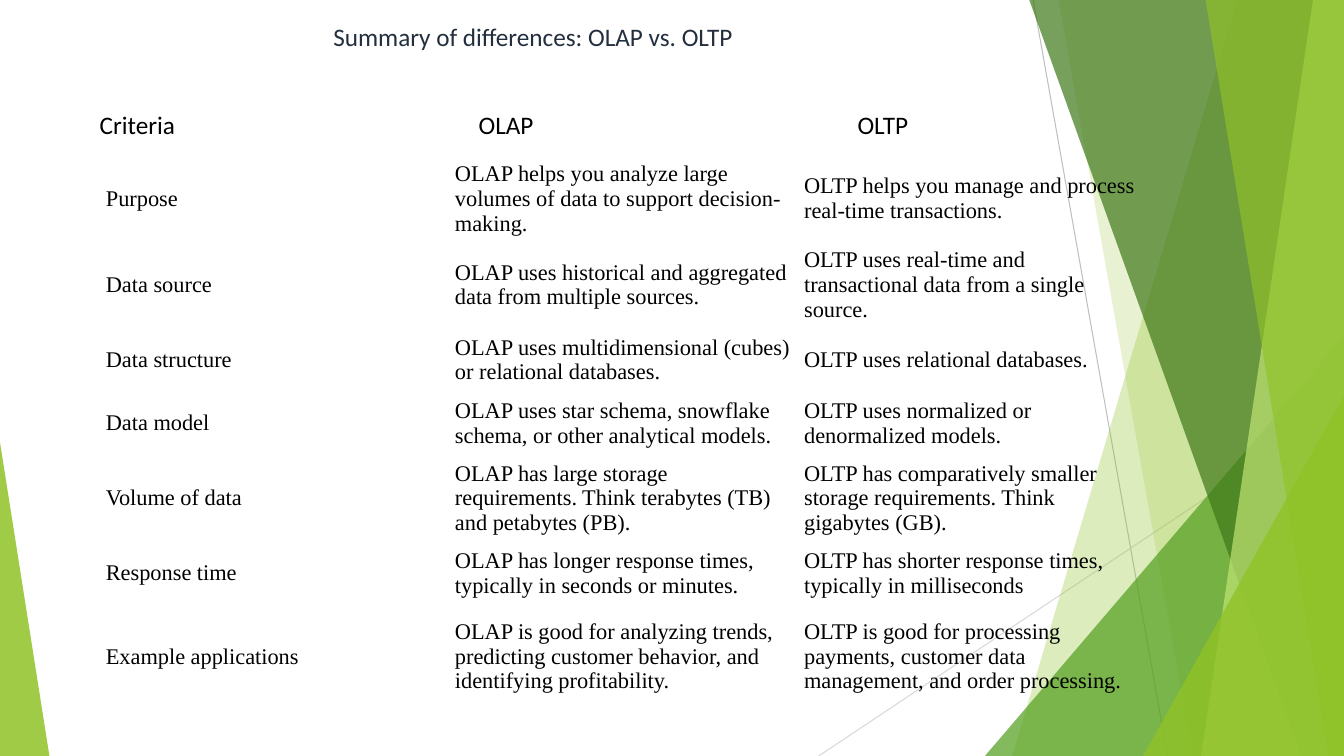
import pptx
import pptx.util
import pptx.dml.color
import pptx.enum.shapes
import pptx.enum.text
import pptx.oxml.ns
import lxml.etree

Pt = pptx.util.Pt
SLIDE_W, SLIDE_H = 960, 540

# Content
heading = "Summary of differences: OLAP vs. OLTP"
criteria_header = [("Criteria", "OLAP", "OLTP")]
comparison = [
    ("Purpose",
     "OLAP helps you analyze large volumes of data to support decision-making.",
     "OLTP helps you manage and process real-time transactions."),
    ("Data source",
     "OLAP uses historical and aggregated data from multiple sources.",
     "OLTP uses real-time and transactional data from a single source."),
    ("Data structure",
     "OLAP uses multidimensional (cubes) or relational databases.",
     "OLTP uses relational databases."),
    ("Data model",
     "OLAP uses star schema, snowflake schema, or other analytical models.",
     "OLTP uses normalized or denormalized models."),
    ("Volume of data",
     "OLAP has large storage requirements. Think terabytes (TB) and petabytes (PB).",
     "OLTP has comparatively smaller storage requirements. Think gigabytes (GB)."),
    ("Response time",
     "OLAP has longer response times, typically in seconds or minutes.",
     "OLTP has shorter response times, typically in milliseconds"),
    ("Example applications",
     "OLAP is good for analyzing trends, predicting customer behavior, and identifying profitability.",
     "OLTP is good for processing payments, customer data management, and order processing."),
]
TALL, SHORT, LAST = 61.7, 45.4, 73.4
comparison_heights = [TALL, TALL, SHORT, SHORT, TALL, SHORT, LAST]

# Decoration: hairlines as start, end, colour
hairlines = [((738, 0), (834, SLIDE_H), "BFBFBF"),
             ((SLIDE_W, 290), (584.8, SLIDE_H), "D9D9D9")]

# Bands reach the right edge: top-left x, bottom-left x, colour, opacity %
# Corners are triangles: left, top, width, apex position, colour, opacity %
bands_behind = [(884, 723, "90C226", 30), (756, 852, "90C226", 20)]
corner_behind = [(703.5, 240, 256.5, 1, "54A021", 72)]
bands_front = [(735, 929.5, "3F7819", 70), (938, 858, "C0E474", 70),
               (861, 949, "90C226", 65)]
corners_front = [(816.5, 283, 143.5, 1, "90C226", 80),
                 (0, 316, 35.3, 0, "90C226", 85)]


def color(hex_text):
    return pptx.dml.color.RGBColor.from_string(hex_text)


def paint(shape, hex_text, opacity):
    shape.shadow.inherit = False
    shape.line.fill.background()
    shape.fill.solid()
    shape.fill.fore_color.rgb = color(hex_text)
    tint = shape.fill._xPr.find(".//" + pptx.oxml.ns.qn("a:srgbClr"))
    alpha = lxml.etree.SubElement(tint, pptx.oxml.ns.qn("a:alpha"))
    alpha.set("val", str(opacity * 1000))


def add_hairline(start, end, hex_text):
    hairline = slide.shapes.add_connector(
        pptx.enum.shapes.MSO_CONNECTOR.STRAIGHT, *map(Pt, start + end))
    hairline.line.color.rgb = color(hex_text)
    hairline.line.width = Pt(0.75)
    lxml.etree.SubElement(hairline._element.spPr, pptx.oxml.ns.qn("a:effectLst"))


def add_band(top_x, bottom_x, hex_text, opacity):
    outline = slide.shapes.build_freeform(Pt(top_x), Pt(-0.7))
    outline.add_line_segments(
        [(Pt(SLIDE_W), Pt(-0.7)), (Pt(SLIDE_W), Pt(SLIDE_H)),
         (Pt(bottom_x), Pt(SLIDE_H))], close=True)
    paint(outline.convert_to_shape(), hex_text, opacity)


def add_corner(left, top, width, apex, hex_text, opacity):
    corner = slide.shapes.add_shape(
        pptx.enum.shapes.MSO_SHAPE.ISOSCELES_TRIANGLE,
        Pt(left), Pt(top), Pt(width), Pt(SLIDE_H - top))
    corner.adjustments[0] = apex
    paint(corner, hex_text, opacity)


def style_text(paragraph, font_name, size, hex_text):
    for run in paragraph.runs:
        run.font.name = font_name
        run.font.size = Pt(size)
        run.font.color.rgb = color(hex_text)


def add_grid(rows, left, top, column_width, heights, font_name, size, margins):
    columns = len(rows[0])
    grid = slide.shapes.add_table(
        len(rows), columns, Pt(left), Pt(top),
        Pt(column_width * columns), Pt(sum(heights))).table
    grid.first_row = grid.horz_banding = False
    # Table style without fills or grid lines
    style_id = grid._tbl.tblPr.find(pptx.oxml.ns.qn("a:tableStyleId"))
    style_id.text = "{2D5ABB26-0587-4C30-8999-92F81FD0307C}"
    for column in grid.columns:
        column.width = Pt(column_width)
    side, edge = margins
    for row, height, texts in zip(grid.rows, heights, rows):
        row.height = Pt(height)
        for cell, text in zip(row.cells, texts):
            cell.text_frame.text = text
            cell.fill.background()
            cell.vertical_anchor = pptx.enum.text.MSO_ANCHOR.MIDDLE
            cell.margin_left = cell.margin_right = Pt(side)
            cell.margin_top = cell.margin_bottom = Pt(edge)
            style_text(cell.text_frame.paragraphs[0], font_name, size, "000000")


# Slide
deck = pptx.Presentation()
deck.slide_width, deck.slide_height = Pt(SLIDE_W), Pt(SLIDE_H)
slide = deck.slides.add_slide(deck.slide_layouts[6])

# Green facets, back to front
for add_part, parts in [(add_hairline, hairlines), (add_band, bands_behind),
                        (add_corner, corner_behind), (add_band, bands_front),
                        (add_corner, corners_front)]:
    for part in parts:
        add_part(*part)

# Heading
heading_box = slide.shapes.add_textbox(Pt(231), Pt(11.5), Pt(343.5), Pt(29))
heading_box.text_frame.text = heading
heading_box.text_frame.word_wrap = False
heading_box.text_frame.auto_size = pptx.enum.text.MSO_AUTO_SIZE.SHAPE_TO_FIT_TEXT
style_text(heading_box.text_frame.paragraphs[0], "Calibri", 18, "232F3E")

# Column titles and comparison
add_grid(criteria_header, 64, 75, 270.7, [29], "Calibri", 18, (7.2, 3.6))
add_grid(comparison, 72, 111, 249.4, comparison_heights,
         "Times New Roman", 16, (3.6, 2))

deck.save("out.pptx")
